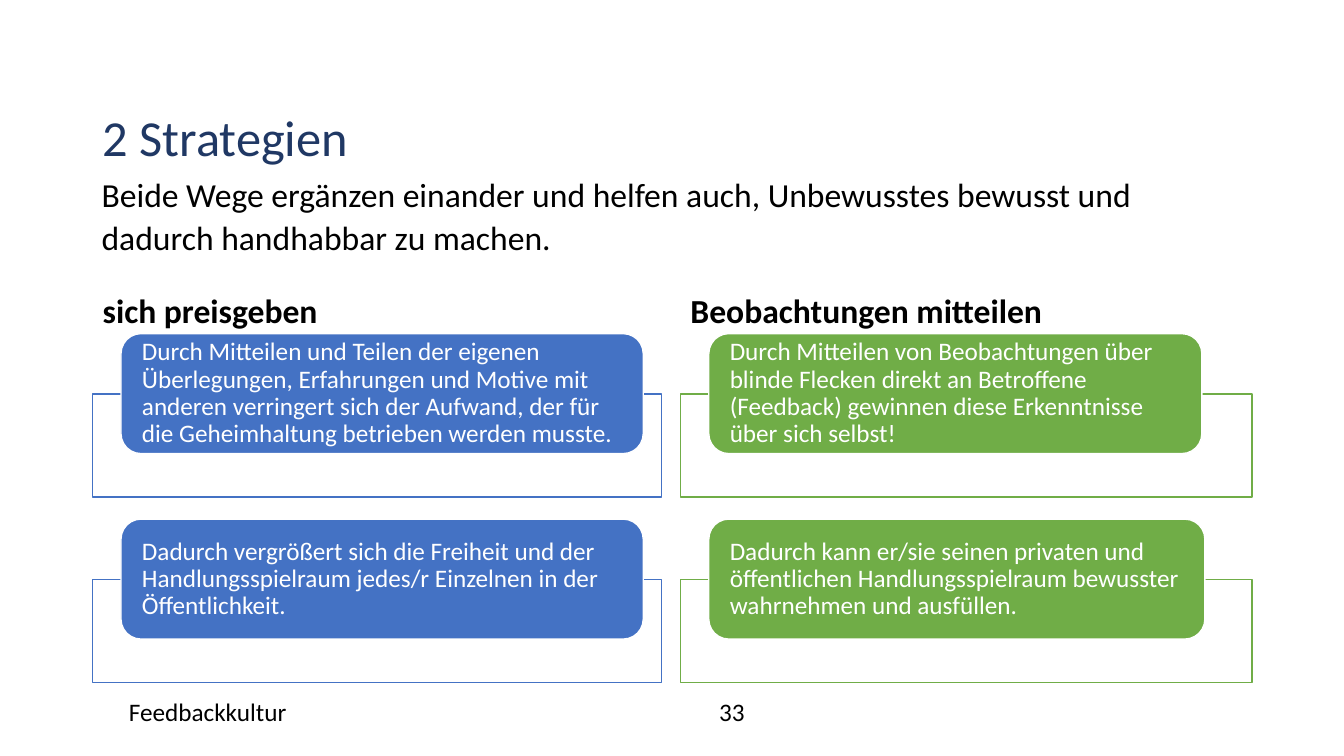
from lxml import etree
from pptx import Presentation
from pptx.dml.color import RGBColor
from pptx.enum import shapes, text
from pptx.oxml import ns
from pptx.util import Inches, Pt

BLACK, WHITE, NAVY, BLUE, GREEN = "000000", "FFFFFF", "203864", "4472C4", "70AD47"


def color(hex_string):
    return RGBColor.from_string(hex_string)


def write(shape, content, size, hex_string, bold=False, spacing=1.0,
          anchor=text.MSO_ANCHOR.TOP, align=text.PP_ALIGN.LEFT):
    frame = shape.text_frame
    frame.word_wrap = True
    frame.vertical_anchor = anchor
    paragraph = frame.paragraphs[0]
    paragraph.alignment = align
    paragraph.line_spacing = spacing
    run = paragraph.add_run()
    run.text = content
    run.font.name = "Calibri"
    run.font.size = Pt(size)
    run.font.bold = bold
    run.font.color.rgb = color(hex_string)


presentation = Presentation()
presentation.slide_width = Inches(13.33)
presentation.slide_height = Inches(7.5)
slide = presentation.slides.add_slide(presentation.slide_layouts[6])

# Title and introduction
title = slide.shapes.add_textbox(Inches(0.92), Inches(1.07), Inches(11.5), Inches(0.97))
write(title, "2 Strategien", 36, NAVY, spacing=0.9)
introduction = slide.shapes.add_textbox(Inches(0.91), Inches(1.65), Inches(11.5), Inches(0.95))
write(introduction, "Beide Wege ergänzen einander und helfen auch, Unbewusstes bewusst "
      "und dadurch handhabbar zu machen.", 24, BLACK, spacing=1.07)

# Strategies: heading, left, width, colour, (card width, card text) from top to bottom
strategies = [
    ("sich preisgeben", 0.92, 5.64, BLUE, [
        (5.18, "Durch Mitteilen und Teilen der eigenen Überlegungen, Erfahrungen und Motive "
               "mit anderen verringert sich der Aufwand, der für die Geheimhaltung betrieben "
               "werden musste."),
        (5.18, "Dadurch vergrößert sich die Freiheit und der Handlungsspielraum jedes/r "
               "Einzelnen in der Öffentlichkeit."),
    ]),
    ("Beobachtungen mitteilen", 6.75, 5.67, GREEN, [
        (4.89, "Durch Mitteilen von Beobachtungen über blinde Flecken direkt an Betroffene "
               "(Feedback) gewinnen diese Erkenntnisse über sich selbst!"),
        (4.92, "Dadurch kann er/sie seinen privaten und öffentlichen Handlungsspielraum "
               "bewusster wahrnehmen und ausfüllen."),
    ]),
]
for heading_text, left, width, accent, cards in strategies:
    heading = slide.shapes.add_textbox(Inches(left), Inches(2.43), Inches(width), Inches(0.9))
    write(heading, heading_text, 24, BLACK, bold=True, spacing=0.9,
          anchor=text.MSO_ANCHOR.BOTTOM)

    for row, (card_width, card_text) in enumerate(cards):
        top = 3.31 + row * 1.84
        frame = slide.shapes.add_shape(shapes.MSO_SHAPE.RECTANGLE, Inches(left),
                                       Inches(top + 0.6), Inches(width), Inches(1.02))
        card = slide.shapes.add_shape(shapes.MSO_SHAPE.ROUNDED_RECTANGLE, Inches(left + 0.28),
                                      Inches(top), Inches(card_width), Inches(1.19))
        for shape, fill, line in ((frame, WHITE, accent), (card, accent, WHITE)):
            shape.shadow.inherit = False
            shape.fill.solid()
            shape.fill.fore_color.rgb = color(fill)
            shape.line.color.rgb = color(line)
            shape.line.width = Pt(1)

        # Slightly transparent frame fill
        fill_color = frame.fill._xPr.find(ns.qn("a:solidFill"))[0]
        etree.SubElement(fill_color, ns.qn("a:alpha"), val="90000")

        card.text_frame.margin_left = card.text_frame.margin_right = Inches(0.15)
        card.text_frame.margin_top = card.text_frame.margin_bottom = Inches(0)
        write(card, card_text, 18, WHITE, spacing=0.9, anchor=text.MSO_ANCHOR.MIDDLE)

# Footer and slide number
footer = slide.shapes.add_textbox(Inches(1.18), Inches(6.86), Inches(4.5), Inches(0.4))
write(footer, "Feedbackkultur", 18, BLACK)
number = slide.shapes.add_textbox(Inches(5.76), Inches(6.86), Inches(3), Inches(0.4))
write(number, "33", 18, BLACK, align=text.PP_ALIGN.CENTER)

presentation.save("out.pptx")
